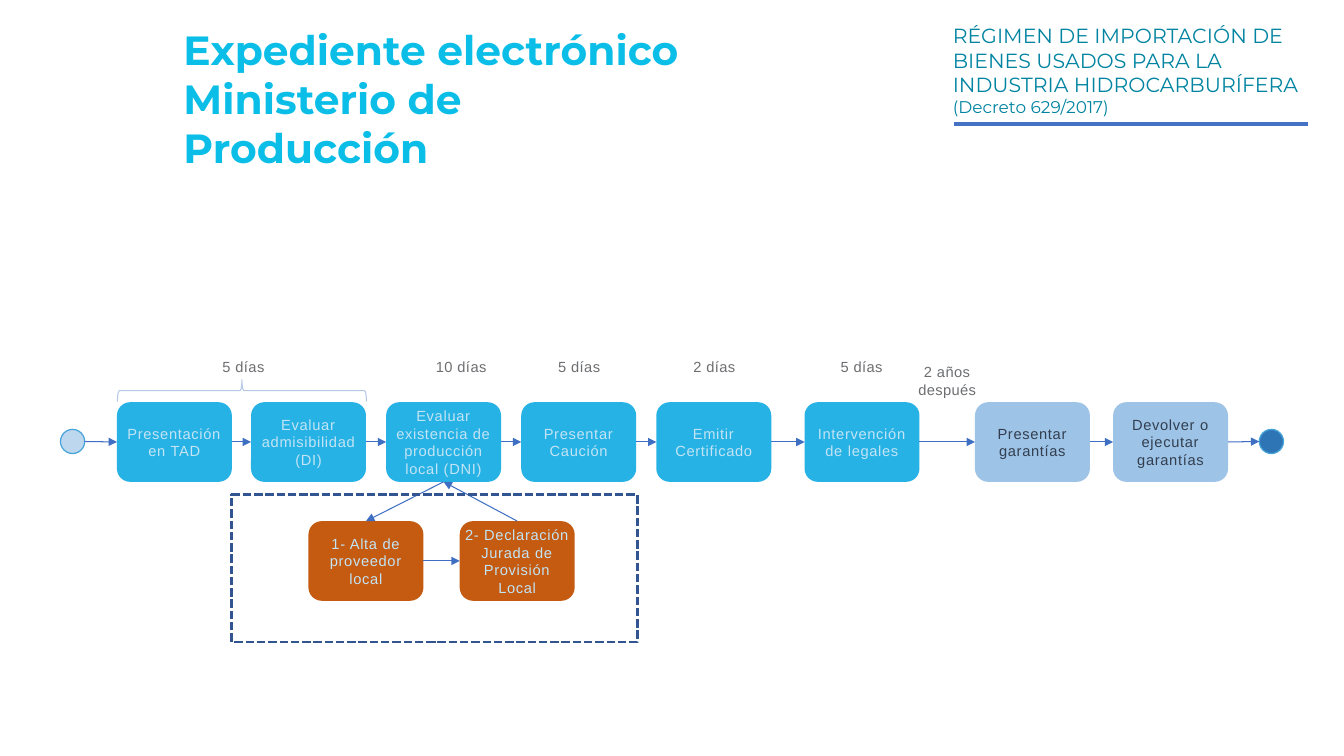
from dataclasses import dataclass
from lxml.etree import SubElement as Sub
from pptx import Presentation
from pptx.dml.color import RGBColor as Rgb
from pptx.enum.dml import MSO_LINE as Dash
from pptx.enum.shapes import MSO_CONNECTOR as Conn, MSO_SHAPE as Kind
from pptx.enum.text import MSO_ANCHOR as Anchor, PP_ALIGN as Align
from pptx.oxml.ns import qn
from pptx.util import Inches, Pt


@dataclass(frozen=True)
class Theme:
    head: str = "Montserrat"
    body: str = "Arial"
    title: str = "0BBEE7"
    teal: str = "0084A1"
    rule: str = "4472C4"
    arrow: str = "3F6FC3"
    step: str = "27B2E5"
    late: str = "9DC3E6"
    local: str = "C55A11"
    pale: str = "C2E4F4"
    dark: str = "333F50"
    gray: str = "6D6E71"
    start: str = "BDD7EE"
    end: str = "2E75B6"
    ring: str = "48A5DA"
    brace: str = "B4C7E7"
    frame: str = "325491"
    big: float = 29.1
    mid: float = 14.6
    note: float = 12.1
    small: float = 10.5


class Board:
    def __init__(self, slide, theme):
        self.slide, self.theme = slide, theme

    def fill_text(self, box, text, size, color, font, pad=0, space=0,
                  align=Align.CENTER, anchor=Anchor.MIDDLE, bold=False):
        frame = box.text_frame
        frame.text = text
        frame.word_wrap = True
        frame.vertical_anchor = anchor
        frame.margin_left = frame.margin_right = Inches(pad)
        frame.margin_top = frame.margin_bottom = Inches(pad)
        for para in frame.paragraphs:
            para.alignment = align
            para.line_spacing = 1.0
            for run in para.runs:
                run.font.name, run.font.size = font, Pt(size)
                run.font.bold = bold
                run.font.color.rgb = Rgb.from_string(color)
                if space:
                    run._r.get_or_add_rPr().set("spc", str(space))
        return frame

    def text(self, x, y, w, h):
        return self.slide.shapes.add_textbox(*map(Inches, (x, y, w, h)))

    def heading(self, x, y, w, h, text, size, color, **kw):
        return self.fill_text(self.text(x, y, w, h), text, size, color,
                              self.theme.head, pad=0.06, align=Align.LEFT,
                              **kw)

    def label(self, x, y, h, text):
        self.fill_text(self.text(x, y, 0.63, h), text, self.theme.small,
                       self.theme.gray, self.theme.body, space=30,
                       anchor=Anchor.TOP)

    def shape(self, kind, x, y, w, h, fill=None, line=None, width=0.75):
        item = self.slide.shapes.add_shape(kind, *map(Inches, (x, y, w, h)))
        item.shadow.inherit = False
        if fill:
            item.fill.solid()
            item.fill.fore_color.rgb = Rgb.from_string(fill)
        else:
            item.fill.background()
        if line:
            item.line.color.rgb = Rgb.from_string(line)
            item.line.width = Pt(width)
        else:
            item.line.fill.background()
        return item

    def step(self, x, y, text, fill, color):
        item = self.shape(Kind.ROUNDED_RECTANGLE, x, y, 1.14, 0.79, fill)
        self.fill_text(item, text, self.theme.small, color, self.theme.body,
                       space=50)
        return item

    def dot(self, x, fill):
        return self.shape(Kind.OVAL, x, 4.26, 0.24, 0.24, fill,
                          self.theme.ring, 0.89)

    def line(self, ends, color, width):
        item = self.slide.shapes.add_connector(Conn.STRAIGHT, *ends)
        item.line.color.rgb = Rgb.from_string(color)
        item.line.width = Pt(width)
        Sub(item._element.spPr, qn("a:effectLst"))
        return item

    def link(self, a, b, out=3, into=1):
        item = self.line(side(a, out) + side(b, into), self.theme.arrow, 0.75)
        Sub(item.line._get_or_add_ln(), qn("a:tailEnd"), type="triangle")
        # Circles number their sites differently, so only boxes are joined
        if a.auto_shape_type != Kind.OVAL:
            item.begin_connect(a, out)
        if b.auto_shape_type != Kind.OVAL:
            item.end_connect(b, into)


def side(box, site):
    """Middle of a side: 0 top, 1 left, 2 bottom, 3 right."""
    dx, dy = ((1, 0), (0, 1), (1, 2), (2, 1))[site]
    return (box.left + box.width * dx // 2, box.top + box.height * dy // 2)


def main():
    deck = Presentation()
    deck.slide_width, deck.slide_height = Inches(13.33), Inches(7.5)
    look = Theme()
    board = Board(deck.slides.add_slide(deck.slide_layouts[6]), look)

    # Headings
    frame = board.heading(
        9.39, -0.3, 3.84, 1.99,
        "RÉGIMEN DE IMPORTACIÓN DE BIENES USADOS PARA LA INDUSTRIA "
        "HIDROCARBURÍFERA\n(Decreto 629/2017)", look.mid, look.teal)
    frame.paragraphs[1].runs[0].font.size = Pt(look.note)
    board.heading(1.76, 0.19, 5.32, 1.12,
                  "Expediente electrónico\nMinisterio de Producción",
                  look.big, look.title, anchor=Anchor.TOP, bold=True)
    board.line([Inches(v) for v in (9.46, 1.23, 12.97, 1.23)], look.rule, 2.25)

    # Main flow
    steps = [(1.16, "Presentación en TAD"),
             (2.49, "Evaluar admisibilidad\n(DI)"),
             (3.83, "Evaluar existencia de producción local (DNI)"),
             (5.17, "Presentar Caución"),
             (6.51, "Emitir Certificado"),
             (7.98, "Intervención de legales")]
    later = [(9.67, "Presentar garantías"),
             (11.04, "Devolver o ejecutar garantías")]
    flow = [board.dot(0.6, look.start)]
    flow += [board.step(x, 3.99, t, look.step, look.pale) for x, t in steps]
    flow += [board.step(x, 3.99, t, look.late, look.dark) for x, t in later]
    flow.append(board.dot(12.49, look.end))
    for a, b in zip(flow, flow[1:]):
        board.link(a, b)

    # Time limits
    for x, text in [(2.1, "5 días"), (4.26, "10 días"), (5.43, "5 días"),
                    (6.77, "2 días"), (8.23, "5 días")]:
        board.label(x, 3.55, 0.14, text)
    board.label(9.08, 3.6, 0.38, "2 años después")
    brace = board.shape(Kind.RIGHT_BRACE, 2.29, 2.64, 0.22, 2.47,
                        line=look.brace)
    brace.rotation = 270

    # Local supplier branch
    entry, claim = [board.step(x, 5.17, t, look.local, look.pale)
                    for x, t in [(3.06, "1- Alta de proveedor local"),
                                 (4.56, "2- Declaración Jurada de "
                                        "Provisión Local")]]
    check = flow[3]
    board.link(entry, claim)
    board.link(check, entry, 2, 0)
    board.link(claim, check, 0, 2)
    area = board.shape(Kind.RECTANGLE, 2.3, 4.91, 4.02, 1.46,
                       line=look.frame, width=2)
    area.line.dash_style = Dash.SQUARE_DOT

    deck.save("out.pptx")


if __name__ == "__main__":
    main()
